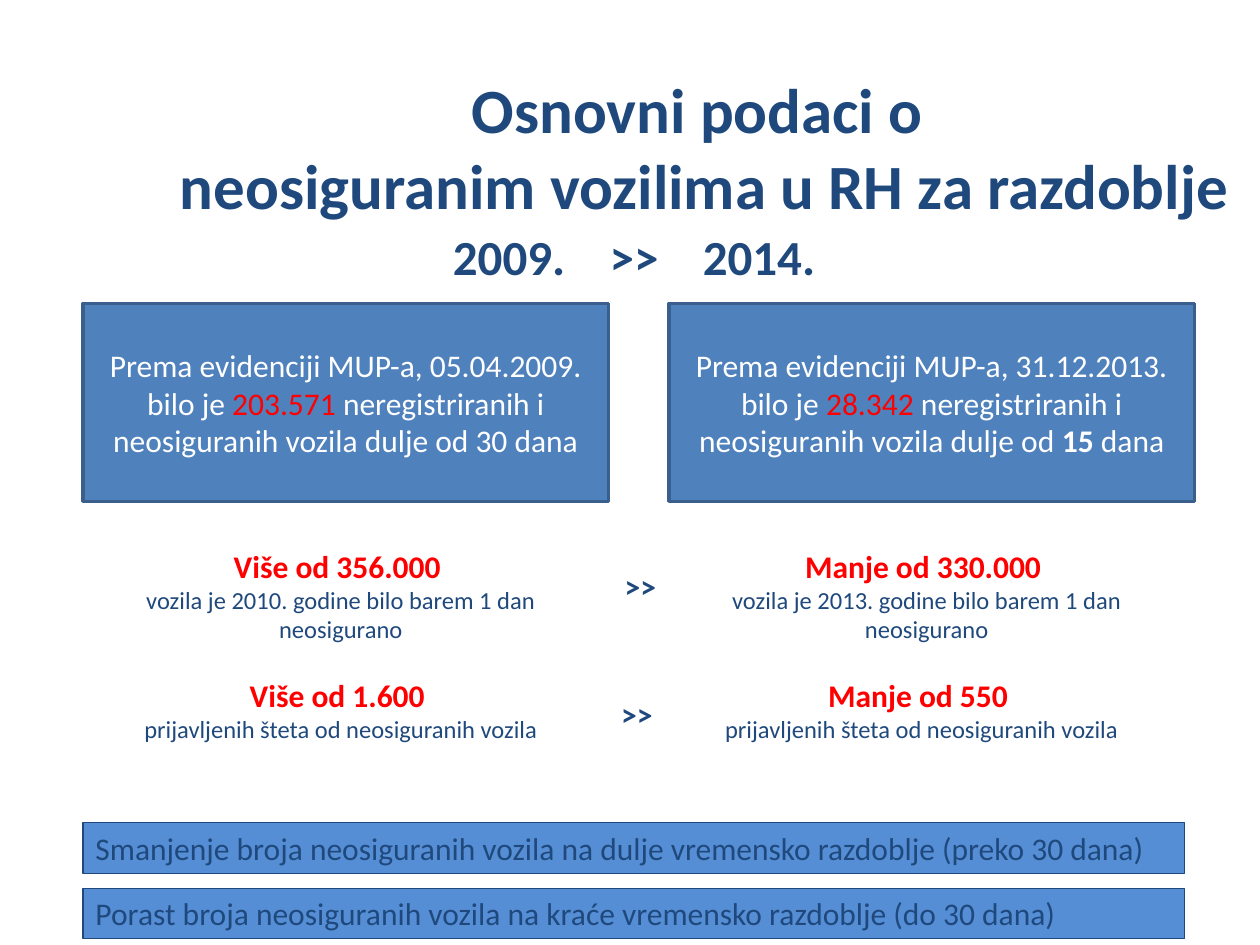
from dataclasses import dataclass

import pptx
import pptx.dml.color
import pptx.enum.shapes
import pptx.enum.text
import pptx.oxml
import pptx.oxml.ns
import pptx.util

Pt = pptx.util.Pt
ALIGN = pptx.enum.text.PP_ALIGN
ANCHOR = pptx.enum.text.MSO_ANCHOR

COLOURS = {
    "navy": "1F497D",
    "red": "FF0000",
    "white": "FFFFFF",
    "card": "4F81BD",
    "card_edge": "3A5F8C",
    "bar": "558ED5",
}
LEFT, RIGHT = 47.5, 382.3


@dataclass
class Span:
    text: str
    size: float = 18
    colour: str = "navy"
    bold: bool = False


@dataclass
class Frame:
    left: float
    top: float
    width: float
    height: float


@dataclass
class Panel:
    frame: Frame
    fill: str
    edge: str
    edge_width: float


def colour(name: str) -> pptx.dml.color.RGBColor:
    return pptx.dml.color.RGBColor.from_string(COLOURS[name])


def points(frame: Frame) -> list:
    return [Pt(n) for n in (frame.left, frame.top, frame.width, frame.height)]


def write(box, lines: list[list[Span]], align=ALIGN.CENTER, anchor=ANCHOR.TOP, wrap=True) -> None:
    """Fill a box with one paragraph for each list of spans."""
    text_frame = box.text_frame
    text_frame.word_wrap = wrap
    text_frame.vertical_anchor = anchor
    text_frame.text = "\n".join("" for _ in lines)
    for para, spans in zip(text_frame.paragraphs, lines):
        para.alignment = align
        for span in spans:
            para_runs = len(para.runs)
            for number, part in enumerate(span.text.split("\v")):
                if number:
                    para.add_line_break()
                para.add_run().text = part
            for run in para.runs[para_runs:]:
                run.font.name = "Calibri"
                run.font.size = Pt(span.size)
                run.font.bold = span.bold
                run.font.color.rgb = colour(span.colour)


def add_text(page, frame: Frame, lines: list[list[Span]], **layout):
    box = page.shapes.add_textbox(*points(frame))
    write(box, lines, **layout)
    return box


def add_panel(page, panel: Panel, spans: list[Span], **layout) -> None:
    box = page.shapes.add_shape(
        pptx.enum.shapes.MSO_SHAPE.RECTANGLE, *points(panel.frame))
    box.shadow.inherit = False
    box.fill.solid()
    box.fill.fore_color.rgb = colour(panel.fill)
    box.line.color.rgb = colour(panel.edge)
    box.line.width = Pt(panel.edge_width)
    write(box, [spans], **layout)


def add_centre_tabs(para, positions: list[float]) -> None:
    tabs = pptx.oxml.parse_xml(f"<a:tabLst {pptx.oxml.ns.nsdecls('a')}/>")
    for position in positions:
        tabs.append(pptx.oxml.parse_xml(
            f"<a:tab {pptx.oxml.ns.nsdecls('a')} pos=\"{Pt(position)}\" algn=\"ctr\"/>"))
    para._p.get_or_add_pPr().append(tabs)


def add_card(page, left: float, spans: list[Span]) -> None:
    panel = Panel(Frame(left, 173.5, 300.2, 113), "card", "card_edge", 2)
    add_panel(page, panel, spans, anchor=ANCHOR.MIDDLE)


def add_figure(page, frame: Frame, headline: str, detail: str) -> None:
    add_text(page, frame, [[Span(headline, colour="red", bold=True)], [Span(detail, 14)]])


def main() -> None:
    deck = pptx.Presentation()
    deck.slide_width, deck.slide_height = Pt(720), Pt(540)
    page = deck.slides.add_slide(deck.slide_layouts[6])

    title = "Osnovni podaci o \vneosiguranim vozilima u RH za razdoblje "
    add_text(page, Frame(93.6, 13, 617.8, 141.1), [[Span(title, 36, bold=True)]],
             anchor=ANCHOR.MIDDLE)
    period = add_text(page, Frame(249.1, 126, 226.8, 41),
                      [[Span("\t2009.\t>>\t2014.", 28, bold=True)]], align=ALIGN.LEFT)
    add_centre_tabs(period.text_frame.paragraphs[0], [34.7, 106.1, 177.5])

    for left, date, count, days in (
        (LEFT, "05.04.2009.", "203.571", Span("30", colour="white")),
        (RIGHT, "31.12.2013.", "28.342", Span("15", colour="white", bold=True)),
    ):
        add_card(page, left, [
            Span(f"Prema evidenciji MUP-a, {date} bilo je ", colour="white"),
            Span(count, colour="red"),
            Span(" neregistriranih i neosiguranih vozila dulje od ", colour="white"),
            days,
            Span(" dana", colour="white"),
        ])

    uninsured = "vozila je {} godine bilo barem 1 dan neosigurano"
    claims = "prijavljenih šteta od neosiguranih vozila"
    for left, top, height, headline, detail in (
        (LEFT, 308.9, 63.4, "Više od 356.000 ", uninsured.format("2010.")),
        (RIGHT, 308.9, 63.4, "Manje od 330.000 ", uninsured.format("2013.")),
        (LEFT, 383, 46, "Više od 1.600 ", claims),
        (RIGHT - 2.9, 383, 46, "Manje od 550 ", claims),
    ):
        add_figure(page, Frame(left, top, 294.5, height), headline, detail)

    for left, top in ((349.9, 320.4), (347.8, 393.8)):
        add_text(page, Frame(left, top, 32.4, 28.8), [[Span(">>", bold=True)]],
                 align=ALIGN.LEFT, wrap=False)

    for top, conclusion in (
        (470.2, "Smanjenje broja neosiguranih vozila na dulje vremensko razdoblje (preko 30 dana)"),
        (507.6, "Porast broja neosiguranih vozila na kraće vremensko razdoblje (do 30 dana)"),
    ):
        panel = Panel(Frame(LEFT, top, 629.3, 28.8), "bar", "navy", 0.75)
        add_panel(page, panel, [Span(conclusion)], align=ALIGN.LEFT)

    deck.save("out.pptx")


if __name__ == "__main__":
    main()
